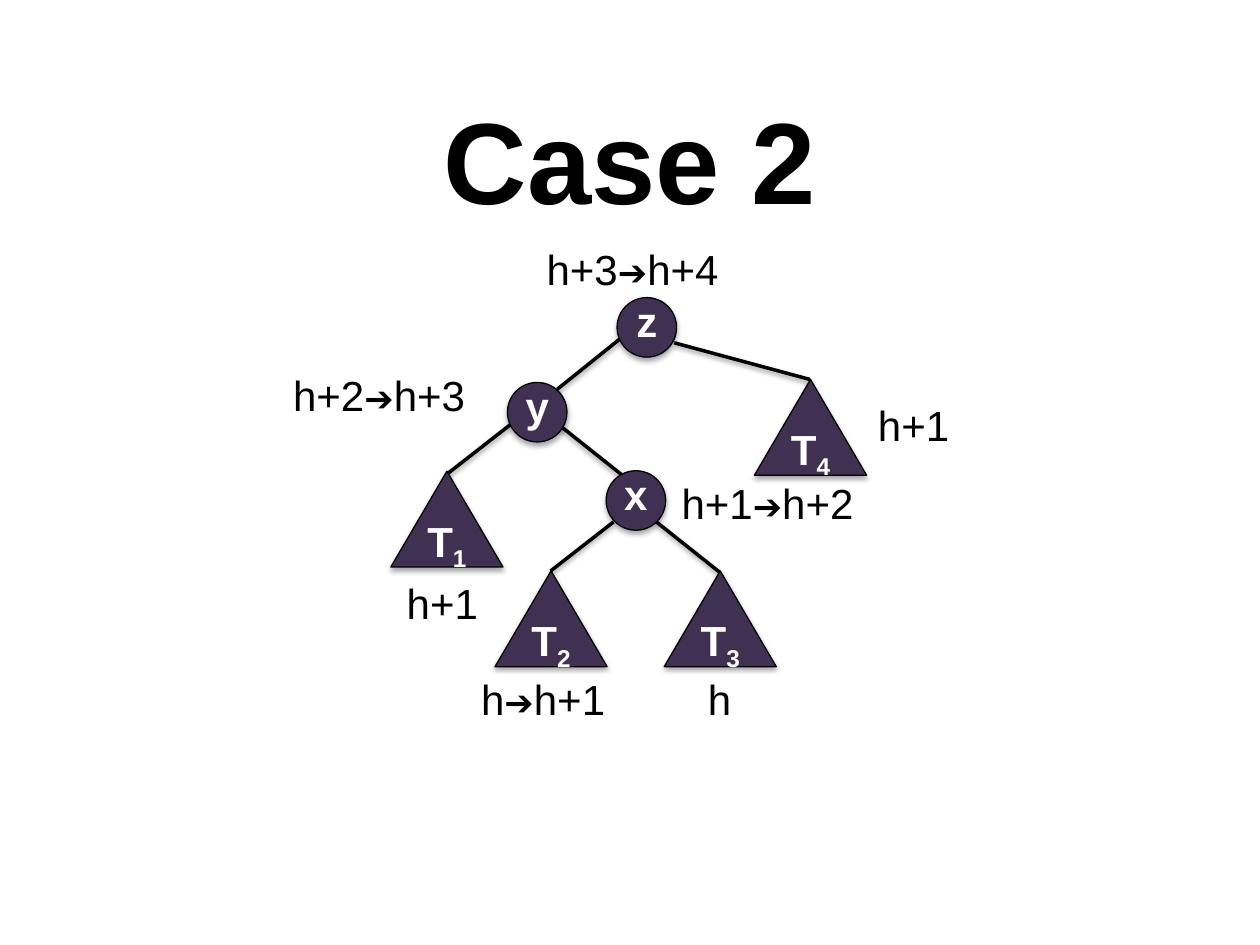
from lxml.etree import SubElement
from pptx import Presentation
from pptx.dml.color import RGBColor
from pptx.enum.shapes import MSO_CONNECTOR, MSO_SHAPE
from pptx.enum.text import MSO_ANCHOR, MSO_AUTO_SIZE, PP_ALIGN
from pptx.oxml.ns import qn
from pptx.util import Cm, Pt

BLACK = RGBColor(0x00, 0x00, 0x00)
WHITE = RGBColor(0xFF, 0xFF, 0xFF)
PURPLE = RGBColor(0x40, 0x31, 0x52)
FONT = "Arial"

CIRCLE_SIZE = 1.2
TRIANGLE_WIDTH, TRIANGLE_HEIGHT = 2.26, 1.93
TEXT_HEIGHT = 1.27


def add_shadow(shape, distance, opacity):
    """Give a shape or connector a soft shadow straight below it."""
    properties = shape._element.spPr
    effects = properties.find(qn("a:effectLst"))
    if effects is None:
        effects = SubElement(properties, qn("a:effectLst"))
    shadow = SubElement(effects, qn("a:outerShdw"), blurRad=str(Pt(3.1)),
                        dist=str(Pt(distance)), dir="5400000", rotWithShape="0")
    color = SubElement(shadow, qn("a:srgbClr"), val=str(BLACK))
    SubElement(color, qn("a:alpha"), val=str(opacity * 1000))


def add_text(left, top, width, height, runs, color, bold, alignment):
    """Add a one-line text box; each run is (text, size, baseline percent)."""
    box = slide.shapes.add_textbox(Cm(left), Cm(top), Cm(width), Cm(height))
    frame = box.text_frame
    frame.word_wrap = False
    frame.auto_size = MSO_AUTO_SIZE.SHAPE_TO_FIT_TEXT
    paragraph = frame.paragraphs[0]
    paragraph.alignment = alignment
    for text, size, baseline in runs:
        run = paragraph.add_run()
        run.text = text
        run.font.name = FONT
        run.font.size = Pt(size)
        run.font.bold = bold
        run.font.color.rgb = color
        if baseline:
            run.font._element.set("baseline", str(baseline * 1000))
    return frame


presentation = Presentation()
presentation.slide_width = Cm(25.4)
presentation.slide_height = Cm(19.05)
slide = presentation.slides.add_slide(presentation.slide_layouts[6])

# Title
title = add_text(1.27, 1.6, 22.86, 3.18, [("Case 2", 66, 0)],
                 BLACK, True, PP_ALIGN.CENTER)
title.word_wrap = True
title.auto_size = MSO_AUTO_SIZE.NONE
title.vertical_anchor = MSO_ANCHOR.MIDDLE

# Tree edges: start x, y and end x, y
edges = [
    (12.5, 6.83, 11.23, 7.85),    # z to y
    (13.59, 6.91, 16.33, 7.65),   # z to T4
    (10.29, 8.56, 9.02, 9.55),    # y to T1
    (11.3, 8.59, 12.57, 9.6),     # y to x
    (12.37, 10.52, 11.1, 11.51),  # x to T2
    (13.23, 10.52, 14.5, 11.53),  # x to T3
]
for edge in edges:
    connector = slide.shapes.add_connector(
        MSO_CONNECTOR.STRAIGHT, *[Cm(value) for value in edge])
    connector.line.color.rgb = BLACK
    connector.line.width = Pt(2)
    add_shadow(connector, 1.6, 38)

# Nodes are placed by their centre, subtrees by their apex
nodes = [("z", 13.04, 6.6), ("y", 10.83, 8.31), ("x", 12.82, 10.09)]
subtrees = [("1", 9.01, 9.5), ("2", 11.11, 11.51),
            ("3", 14.52, 11.51), ("4", 16.34, 7.65)]
parts = [(MSO_SHAPE.OVAL, x, y - CIRCLE_SIZE / 2, CIRCLE_SIZE, CIRCLE_SIZE,
          y - 0.76, 0.97, [(name, 24, 0)])
         for name, x, y in nodes]
parts += [(MSO_SHAPE.ISOSCELES_TRIANGLE, x, y, TRIANGLE_WIDTH, TRIANGLE_HEIGHT,
           y + 0.76, 1.32, [("T", 24, 0), (number, 24, -25)])
          for number, x, y in subtrees]
for kind, center, top, width, height, text_top, text_width, runs in parts:
    shape = slide.shapes.add_shape(
        kind, Cm(center - width / 2), Cm(top), Cm(width), Cm(height))
    shape.fill.solid()
    shape.fill.fore_color.rgb = PURPLE
    shape.line.color.rgb = BLACK
    shape.line.width = Pt(0.75)
    shape.shadow.inherit = False
    add_shadow(shape, 1.8, 35)
    add_text(center - text_width / 2, text_top, text_width, TEXT_HEIGHT,
             runs, WHITE, True, PP_ALIGN.CENTER)

# Heights before and after the insertion
heights = [
    (10.77, 4.78, 4.32, "h+3", "h+4"),
    (5.66, 7.32, 4.32, "h+2", "h+3"),
    (13.49, 9.5, 4.32, "h+1", "h+2"),
    (9.45, 13.46, 3.28, "h", "h+1"),
    (7.95, 11.51, 2.03, "h+1", None),
    (17.45, 7.92, 2.03, "h+1", None),
    (14.02, 13.46, 0.99, "h", None),
]
for left, top, width, before, after in heights:
    runs = [(before, 24, 0)]
    if after:
        runs += [("➔", 20, 0), (after, 24, 0)]
    add_text(left, top, width, TEXT_HEIGHT, runs, BLACK, False, PP_ALIGN.LEFT)

presentation.save("out.pptx")
